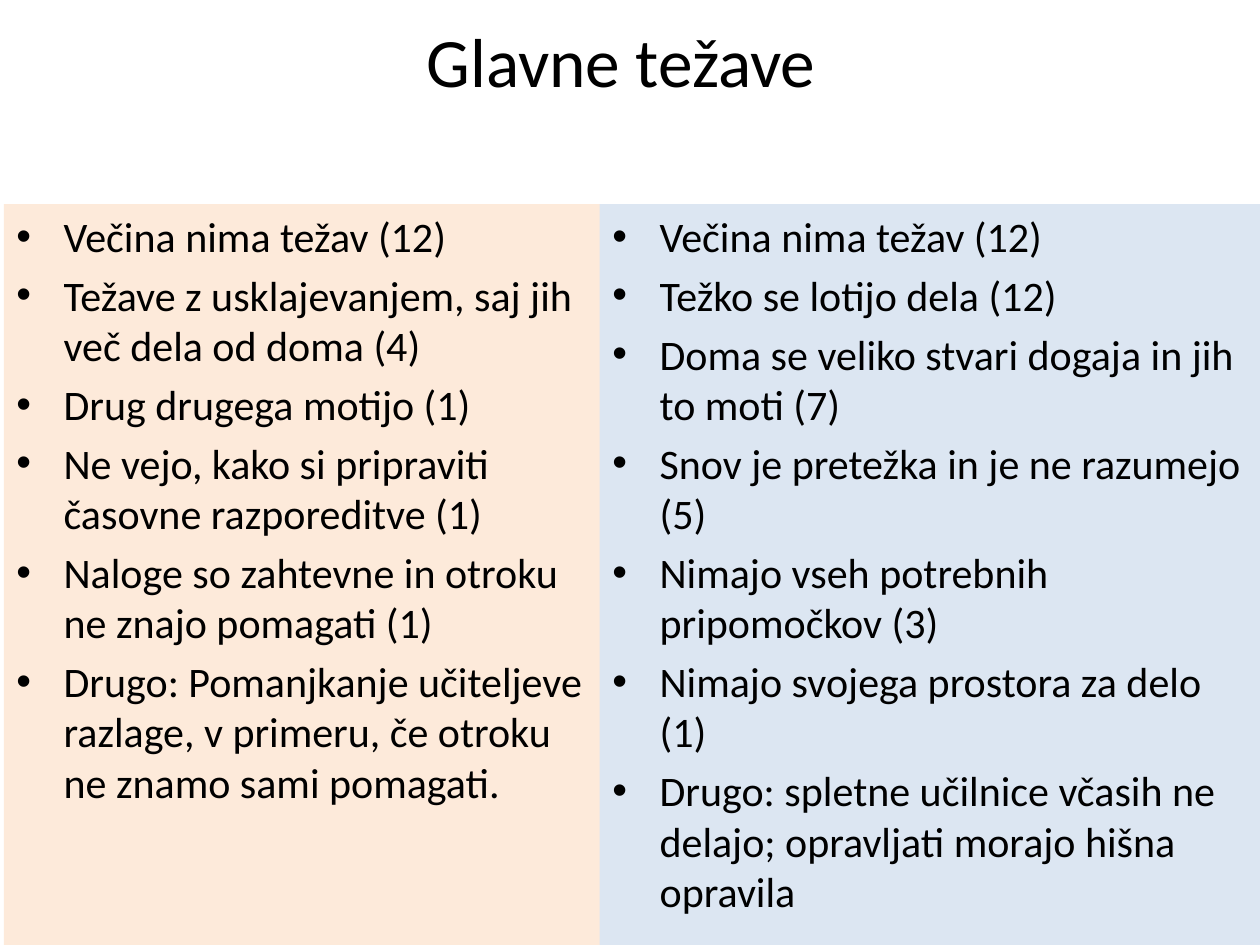
from pptx import Presentation
from pptx.dml.color import RGBColor
from pptx.enum.text import MSO_ANCHOR, MSO_AUTO_SIZE, PP_ALIGN
from pptx.util import Inches, Pt

theme = {
    "font": "Calibri",
    "text": "000000",
    "title_size": 39.6,
    "text_size": 24,
    "parents_panel": "FDEADA",
    "students_panel": "DCE6F2",
}

# Two Content layout: title 0, lists 1 and 2
deck = Presentation()
deck.slide_width, deck.slide_height = Inches(10), Inches(7.5)
slide = deck.slides.add_slide(deck.slide_layouts[3])
parts = {part.placeholder_format.idx: part for part in slide.placeholders}


def fill_part(part, box, lines, size, anchor, align=None):
    """Place a placeholder and write one formatted paragraph per line."""
    part.left, part.top, part.width, part.height = map(Inches, box)
    frame = part.text_frame
    frame.text = "\n".join(lines)
    frame_format = {"word_wrap": True, "auto_size": MSO_AUTO_SIZE.NONE,
                    "vertical_anchor": anchor}
    for name, value in frame_format.items():
        setattr(frame, name, value)
    font_format = {"name": theme["font"], "size": Pt(size)}
    for paragraph in frame.paragraphs:
        paragraph.alignment = align
        for run in paragraph.runs:
            for name, value in font_format.items():
                setattr(run.font, name, value)
            run.font.color.rgb = RGBColor.from_string(theme["text"])


# Title
fill_part(parts[0], (0.43, 0.13, 9, 0.69), ["Glavne težave"],
          theme["title_size"], MSO_ANCHOR.MIDDLE, PP_ALIGN.CENTER)

# Lists on coloured panels
parents_problems = [
    "Večina nima težav (12)",
    "Težave z usklajevanjem, saj jih več dela od doma (4)",
    "Drug drugega motijo (1)",
    "Ne vejo, kako si pripraviti časovne razporeditve (1)",
    "Naloge so zahtevne in otroku ne znajo pomagati (1)",
    "Drugo: Pomanjkanje učiteljeve razlage, v primeru, če otroku ne znamo sami pomagati.",
]
students_problems = [
    "Večina nima težav (12)",
    "Težko se lotijo dela (12)",
    "Doma se veliko stvari dogaja in jih to moti (7)",
    "Snov je pretežka in je ne razumejo (5)",
    "Nimajo vseh potrebnih pripomočkov (3)",
    "Nimajo svojega prostora za delo (1)",
    "Drugo: spletne učilnice včasih ne delajo; opravljati morajo hišna opravila",
]
panel_top, panel_height = 1.62, 5.88
columns = [
    (1, parents_problems, 0.03, 4.8, "parents_panel"),
    (2, students_problems, 4.76, 5.24, "students_panel"),
]
for idx, problems, left, width, panel in columns:
    fill_part(parts[idx], (left, panel_top, width, panel_height), problems,
              theme["text_size"], MSO_ANCHOR.TOP)
    parts[idx].fill.solid()
    parts[idx].fill.fore_color.rgb = RGBColor.from_string(theme[panel])

deck.save("out.pptx")
